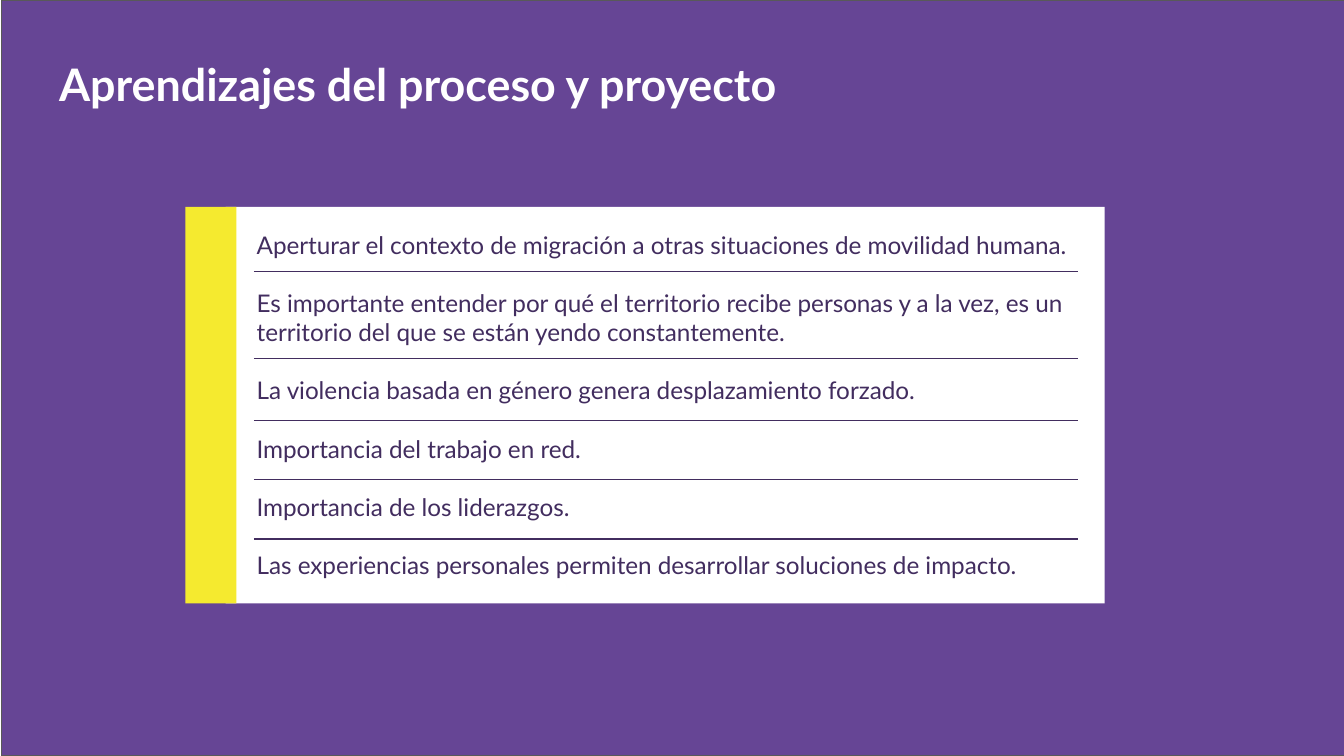
from lxml import etree
from pptx import Presentation
from pptx.dml.color import RGBColor
from pptx.enum.shapes import MSO_CONNECTOR, MSO_SHAPE
from pptx.enum.text import MSO_ANCHOR, MSO_AUTO_SIZE, PP_ALIGN
from pptx.oxml.ns import qn
from pptx.util import Inches, Pt

RECT = MSO_SHAPE.RECTANGLE
LINE = MSO_CONNECTOR.STRAIGHT
TOP = MSO_ANCHOR.TOP
LEFT = PP_ALIGN.LEFT
FIXED = MSO_AUTO_SIZE.NONE

PURPLE, DARK, YELLOW = "664595", "422D5F", "F5EA2F"
WHITE, GRAY = "FFFFFF", "595959"

# 16:9 slide
WIDE = 10
HIGH = WIDE * 9 / 16

LESSONS = [
    "Aperturar el contexto de migración a otras situaciones de movilidad humana.",
    "Es importante entender por qué el territorio recibe personas y a la vez, "
    "es un territorio del que se están yendo constantemente.",
    "La violencia basada en género genera desplazamiento forzado.",
    "Importancia del trabajo en red.",
    "Importancia de los liderazgos.",
    "Las experiencias personales permiten desarrollar soluciones de impacto.",
]
RULES = [2.02, 2.67, 3.13, 3.57, 4.01]


def color(code):
    return RGBColor.from_string(code)


class Deck:
    font = "Lato"
    width = Pt(0.75)
    inset = Inches(0.1)

    def __init__(self, slide):
        self.slide = slide

    def rect(self, x, y, w, h, fill, edge=None):
        box = self.slide.shapes.add_shape(
            RECT, Inches(x), Inches(y), Inches(w), Inches(h))
        box.shadow.inherit = False
        box.fill.solid()
        box.fill.fore_color.rgb = color(fill)
        if edge:
            box.line.color.rgb = color(edge)
            box.line.width = self.width
        else:
            box.line.fill.background()

    def rule(self, x1, x2, y):
        line = self.slide.shapes.add_connector(
            LINE, Inches(x1), Inches(y), Inches(x2), Inches(y))
        line.line.color.rgb = color(DARK)
        line.line.width = self.width
        etree.SubElement(line.element.spPr, qn("a:effectLst"))

    def text(self, hold, x, y, w, h, lines, size, ink, bold=False, gap=0):
        hold.left, hold.top = Inches(x), Inches(y)
        hold.width, hold.height = Inches(w), Inches(h)
        # Bring the placeholder in front of the shapes drawn so far
        hold.element.getparent().append(hold.element)
        frame = hold.text_frame
        frame.word_wrap = True
        frame.auto_size = FIXED
        frame.vertical_anchor = TOP
        frame.margin_left = frame.margin_right = self.inset
        frame.margin_top = frame.margin_bottom = self.inset
        for i, words in enumerate(lines):
            para = frame.add_paragraph() if i else frame.paragraphs[0]
            para.alignment = LEFT
            para.line_spacing = 1.0
            para.space_before = Pt(0)
            para.space_after = Pt(gap)
            props = para._p.get_or_add_pPr()
            props.set("marL", "0")
            props.set("indent", "0")
            etree.SubElement(props, qn("a:buNone"))
            run = para.add_run()
            run.text = words
            run.font.name = self.font
            run.font.size = Pt(size)
            run.font.bold = bold
            run.font.color.rgb = color(ink)


def main():
    prs = Presentation()
    prs.slide_width, prs.slide_height = Inches(WIDE), Inches(HIGH)
    slide = prs.slides.add_slide(prs.slide_layouts[1])
    deck = Deck(slide)
    title, body = slide.placeholders

    # Background and card
    deck.rect(0.01, 0, WIDE, HIGH, PURPLE, GRAY)
    deck.rect(1.68, 1.54, 6.54, 2.95, WHITE)

    # List and title
    deck.text(body, 1.81, 1.61, 6.41, 3.05, LESSONS, 13, DARK, gap=15.6)
    deck.text(title, 0.34, 0.32, 9.32, 0.63,
              ["Aprendizajes del proceso y proyecto"], 24, WHITE, bold=True)

    # Accent bar and rules between the lessons
    deck.rect(1.38, 1.54, 0.38, 2.95, YELLOW)
    for y in RULES:
        deck.rule(1.89, 8.02, y)

    prs.save("out.pptx")


if __name__ == "__main__":
    main()
